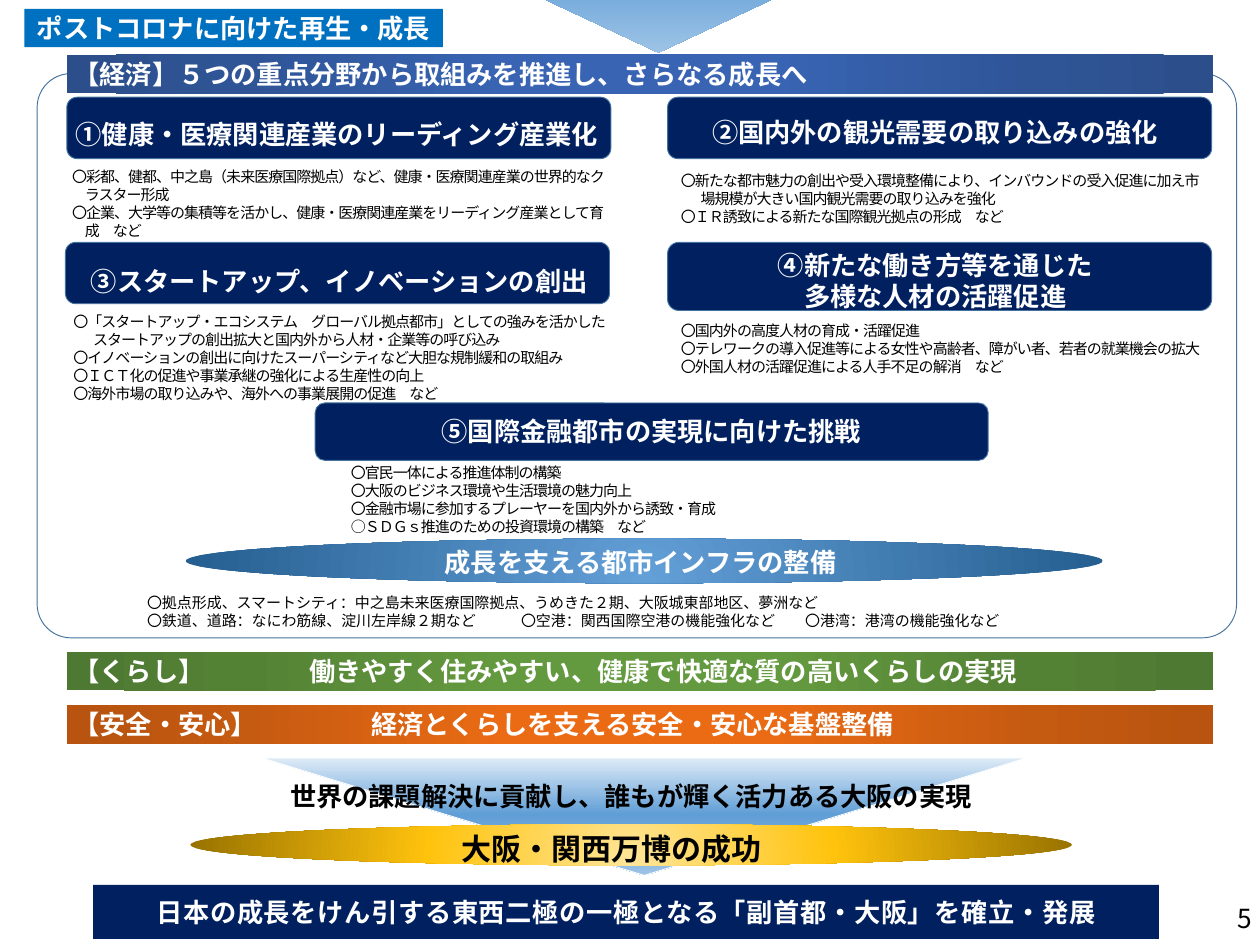
from dataclasses import dataclass
from typing import NamedTuple, Optional

from lxml import etree
from pptx import Presentation, util as u
from pptx.dml.color import RGBColor
from pptx.enum import shapes, text
from pptx.oxml import ns

COLS, ROWS = 56, 42
CELL = u.Inches(1) / 3
KIND = shapes.MSO_SHAPE
TOP, MID = text.MSO_ANCHOR.TOP, text.MSO_ANCHOR.MIDDLE
LEFT, MIDST, RIGHT = text.PP_ALIGN.LEFT, text.PP_ALIGN.CENTER, text.PP_ALIGN.RIGHT


@dataclass(frozen=True)
class Theme:
    navy: str = "002060"
    blue: str = "0070C0"
    edge: str = "43739E"
    white: str = "FFFFFF"
    black: str = "000000"
    face: str = "Arial"
    asian: str = "Noto Sans CJK JP"
    note: float = 16
    head: float = 28
    big: float = 32


class Box(NamedTuple):
    x: float
    y: float
    w: float
    h: float


class Style(NamedTuple):
    size: float
    color: str
    bold: bool = False
    align: int = LEFT
    anchor: int = TOP
    space: float = 0
    hang: float = 0
    tabs: tuple = ()
    inset: Optional[tuple] = None
    face: str = "Arial"


class Grad(NamedTuple):
    stops: tuple
    rect: Optional[tuple] = None


class Card(NamedTuple):
    box: Box
    label: Box
    head: str
    area: Box
    notes: str
    hang: float = 0.87


class Bar(NamedTuple):
    y: float
    words: str
    fill: Grad
    tab: float = 0


T = Theme()
HEAD = Style(T.head, T.white, True, MIDST)
NOTE = Style(T.note, T.black, anchor=MID, space=-1)
EVEN, OVAL = (50, 50, 50, 50), (50, 130, 50, -30)
SKY = Grad(((0, "DEEBF7"), (48, "609ED6"), (100, "9DC3E6")))
SEA = Grad(((0, "63A0D7"), (100, "255E91")), OVAL)
GOLD = Grad(((0, "FFE699"), (46, "FFC30D"), (100, "997300")), OVAL)


def glow(core: str, mid: str, rim: str) -> Grad:
    return Grad(((0, core), (23, core), (69, mid), (97, rim)), EVEN)


BARS = (
    Bar(2.43, "【経済】５つの重点分野から取組みを推進し、さらなる成長へ",
        glow("3864B3", "2F5597", "2C4F8C")),
    Bar(28.98, "【くらし】\t働きやすく住みやすい、健康で快適な質の高いくらしの実現",
        glow("649A3F", "548235", "4E7932"), 10.47),
    Bar(31.35, "【安全・安心】\t経済とくらしを支える安全・安心な基盤整備",
        glow("EA6B14", "C55A11", "B85410"), 13.23),
)
CARDS = (
    Card(Box(2.97, 4.32, 24.18, 2.73), Box(2.97, 5.13, 24, 1.71),
         "①健康・医療関連産業のリーディング産業化", Box(2.91, 7.59, 24.72, 2.91),
         "〇彩都、健都、中之島（未来医療国際拠点）など、健康・医療関連産業の世界的なクラスター形成\n"
         "〇企業、大学等の集積等を活かし、健康・医療関連産業をリーディング産業として育成　など", 0.57),
    Card(Box(29.67, 4.32, 24.18, 2.73), Box(29.52, 5.04, 24.06, 1.71),
         "②国内外の観光需要の取り込みの強化", Box(29.97, 7.38, 23.7, 2.91),
         "〇新たな都市魅力の創出や受入環境整備により、インバウンドの受入促進に加え市場規模が大きい国内観光需要の取り込みを強化\n"
         "〇ＩＲ誘致による新たな国際観光拠点の形成　など"),
    Card(Box(2.91, 10.77, 24.18, 2.73), Box(3.66, 11.64, 22.83, 1.71),
         "③スタートアップ、イノベーションの創出", Box(2.97, 13.89, 24.69, 4.02),
         "〇「スタートアップ・エコシステム　グローバル拠点都市」としての強みを活かしたスタートアップの創出拡大と国内外から人材・企業等の呼び込み\n"
         "〇イノベーションの創出に向けたスーパーシティなど大胆な規制緩和の取組み\n"
         "〇ＩＣＴ化の促進や事業承継の強化による生産性の向上\n"
         "〇海外市場の取り込みや、海外への事業展開の促進　など"),
    Card(Box(29.67, 10.77, 24.18, 3.03), Box(30.57, 10.92, 21.99, 3.12),
         "④新たな働き方等を通じた\n多様な人材の活躍促進", Box(29.97, 13.86, 23.91, 3.24),
         "〇国内外の高度人材の育成・活躍促進\n"
         "〇テレワークの導入促進等による女性や高齢者、障がい者、若者の就業機会の拡大\n"
         "〇外国人材の活躍促進による人手不足の解消　など"),
    Card(Box(14.01, 17.91, 29.91, 2.55), Box(16.26, 18.33, 25.38, 1.71),
         "⑤国際金融都市の実現に向けた挑戦", Box(15.3, 21.09, 28.62, 2.22),
         "〇官民一体による推進体制の構築\n"
         "〇大阪のビジネス環境や生活環境の魅力向上\n"
         "〇金融市場に参加するプレーヤーを国内外から誘致・育成\n"
         "○ＳＤＧｓ推進のための投資環境の構築　など"),
)


def span(n: float) -> int:
    return round(n * CELL)


def node(root, tag: str, **attrs):
    return etree.SubElement(root, ns.qn(tag), {k: str(v) for k, v in attrs.items()})


def shade(shape, grad: Grad) -> None:
    shape.fill.background()
    props = shape._element.spPr
    old = props.find(ns.qn("a:noFill"))
    new = node(props, "a:gradFill", rotWithShape=1)
    stops = node(new, "a:gsLst")
    for pos, color in grad.stops:
        node(node(stops, "a:gs", pos=pos * 1000), "a:srgbClr", val=color)
    if grad.rect:
        sides = {k: v * 1000 for k, v in zip("ltrb", grad.rect)}
        node(node(new, "a:path", path="circle"), "a:fillToRect", **sides)
    else:
        node(new, "a:lin", ang=270 * 60000, scaled=0)
    props.replace(old, new)


def write(shape, words: str, style: Style) -> None:
    frame = shape.text_frame
    frame.auto_size = text.MSO_AUTO_SIZE.NONE
    frame.word_wrap = True
    frame.vertical_anchor = style.anchor
    if style.inset:
        frame.margin_left = frame.margin_right = u.Inches(style.inset[0])
        frame.margin_top = frame.margin_bottom = u.Inches(style.inset[1])
    frame.text = words
    for para in frame.paragraphs:
        para.alignment = style.align
        font = para.font
        font.size, font.bold, font.name = u.Pt(style.size), style.bold, style.face
        font.color.rgb = RGBColor.from_string(style.color)
        node(font._element, "a:ea", typeface=T.asian)
        if style.space:
            font._element.set("spc", str(round(style.space * 100)))
        props = para._p.get_or_add_pPr()
        if style.hang:
            props.set("marL", str(span(style.hang)))
            props.set("indent", str(-span(style.hang)))
        if style.tabs:
            stops = node(props, "a:tabLst")
            for tab in style.tabs:
                node(stops, "a:tab", pos=span(tab), algn="l")
            props.insert(0, stops)


def label(slide, box: Box, words: str, style: Style) -> None:
    write(slide.shapes.add_textbox(*map(span, box)), words, style)


def draw(slide, kind, box: Box, fill=None, line: str = "", flip=False, turn=0):
    shape = slide.shapes.add_shape(kind, *map(span, box))
    shape.shadow.inherit = False
    shape.rotation = turn
    if flip:
        shape._element.spPr.xfrm.set("flipV", "1")
    if isinstance(fill, Grad):
        shade(shape, fill)
    elif fill:
        shape.fill.solid()
        shape.fill.fore_color.rgb = RGBColor.from_string(fill)
    else:
        shape.fill.background()
    if line:
        shape.line.color.rgb = RGBColor.from_string(line)
        shape.line.width = u.Pt(1)
    else:
        shape.line.fill.background()
    return shape


def main() -> None:
    deck = Presentation()
    deck.slide_width, deck.slide_height = span(COLS), span(ROWS)
    slide = deck.slides.add_slide(deck.slide_layouts[5])
    title = slide.shapes.title
    title.left, title.top, title.width, title.height = map(span, Box(1.08, 0.39, 18.6, 1.71))
    title.fill.solid()
    title.fill.fore_color.rgb = RGBColor.from_string(T.blue)
    write(title, "ポストコロナに向けた再生・成長", HEAD)

    frame = draw(slide, KIND.ROUNDED_RECTANGLE, Box(1.65, 3.27, 53.31, 25.08), line=T.edge)
    frame.adjustments[0] = 0.06
    draw(slide, KIND.ISOSCELES_TRIANGLE, Box(13.11, -5.22, 32.31, 7.56), SKY, flip=True)
    for bar in BARS:
        shape = draw(slide, KIND.RECTANGLE, Box(2.97, bar.y, 50.94, 1.71), bar.fill)
        write(shape, bar.words, HEAD._replace(align=LEFT, tabs=(bar.tab,) if bar.tab else ()))
    for card in CARDS:
        draw(slide, KIND.ROUNDED_RECTANGLE, card.box, T.navy, T.edge)
        label(slide, card.label, card.head, HEAD)
        label(slide, card.area, card.notes, NOTE._replace(hang=card.hang))

    draw(slide, KIND.OVAL, Box(8.25, 23.94, 40.77, 1.98), SEA, flip=True, turn=180)
    label(slide, Box(12.36, 24.12, 32.22, 1.71), "成長を支える都市インフラの整備", HEAD)
    label(slide, Box(6.24, 26.04, 45.24, 2.28),
          "〇拠点形成、スマートシティ：中之島未来医療国際拠点、うめきた２期、大阪城東部地区、夢洲など\n"
          "〇鉄道、道路：なにわ筋線、淀川左岸線２期など\t〇空港：関西国際空港の機能強化など\t〇港湾：港湾の機能強化など",
          NOTE._replace(space=0, tabs=(16.62, 29.25)))

    draw(slide, KIND.ISOSCELES_TRIANGLE, Box(11.64, 33.69, 33.99, 5.22), SKY, T.white, flip=True)
    draw(slide, KIND.OVAL, Box(8.46, 36.63, 39.18, 1.83), GOLD, turn=180)
    label(slide, Box(19.05, 36.87, 17.61, 1.68), "大阪・関西万博の成功　",
          HEAD._replace(size=T.big, color=T.black, anchor=MID, inset=(0, 0)))
    label(slide, Box(5.07, 34.53, 45.93, 1.71),
          "世界の課題解決に貢献し、誰もが輝く活力ある大阪の実現", HEAD._replace(color=T.black))
    goal = draw(slide, KIND.RECTANGLE, Box(4.14, 39.33, 47.37, 2.4), T.navy)
    write(goal, "日本の成長をけん引する東西二極の一極となる「副首都・大阪」を確立・発展",
          HEAD._replace(anchor=MID, space=0.7, inset=(0, 0.05)))
    label(slide, Box(53.13, 39.69, 2.82, 2.25), "5",
          Style(T.head, T.black, align=RIGHT, anchor=MID, face=T.asian))
    deck.save("out.pptx")


if __name__ == "__main__":
    main()
